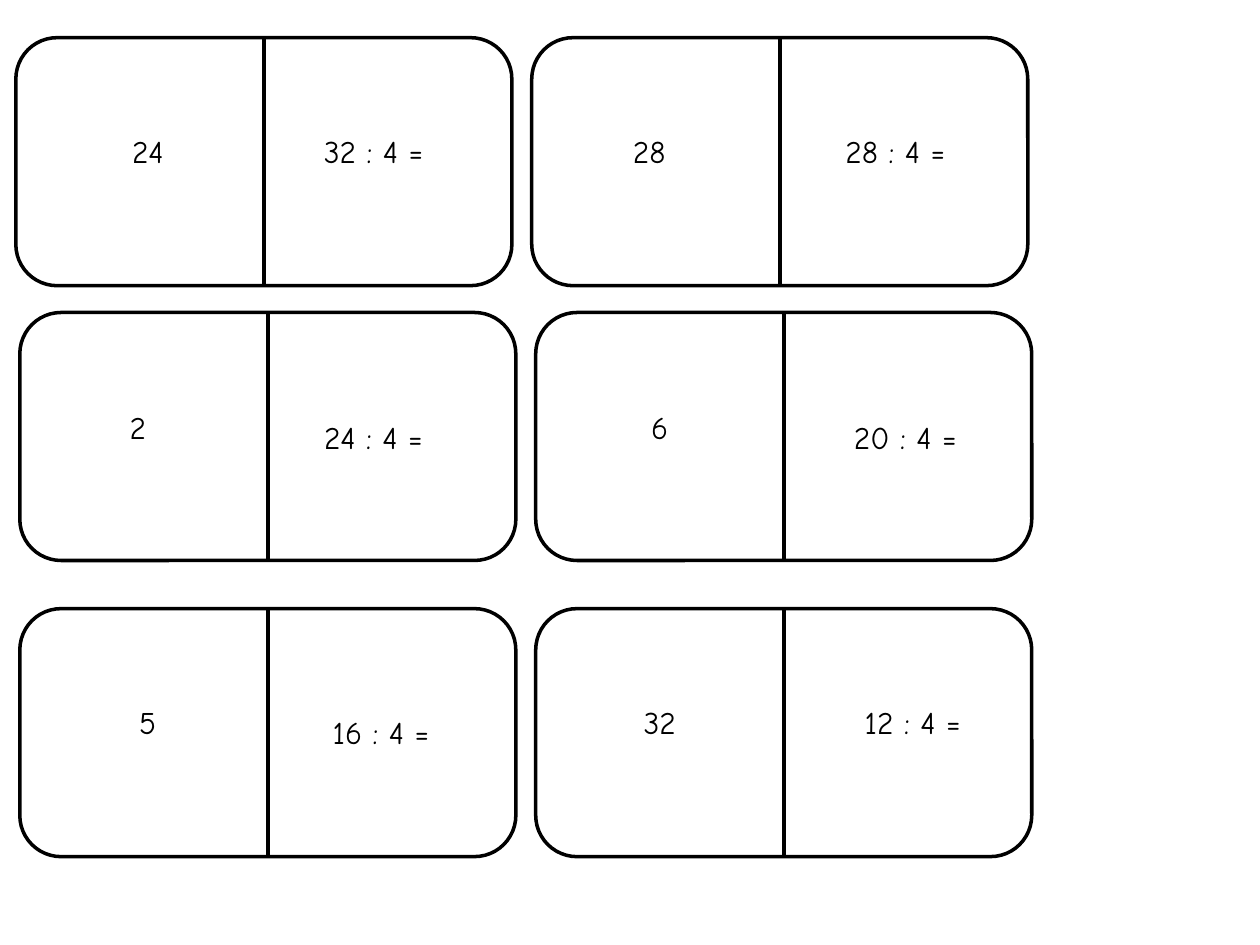
from lxml.etree import SubElement
from pptx import Presentation
from pptx.dml.color import RGBColor
from pptx.enum.shapes import MSO_CONNECTOR, MSO_SHAPE
from pptx.enum.text import MSO_AUTO_SIZE, PP_ALIGN
from pptx.oxml.ns import qn
from pptx.util import Cm, Pt

THEME = {
    "ink": RGBColor(0, 0, 0),
    "font": {"name": "Comic Neue", "size": Pt(18)},
    "line": Pt(2),
}

# Each label: text, centre across the card, top within the card (cm)
ROWS = [
    {"left": 0.32, "top": 0.76, "cards": [
        [("24", 2.66, 1.78), ("32 : 4 =", 7.21, 1.78)],
        [("28", 2.37, 1.78), ("28 : 4 =", 7.33, 1.78)],
    ]},
    {"left": 0.4, "top": 6.3, "cards": [
        [("2", 2.38, 1.8), ("24 : 4 =", 7.13, 2)],
        [("6", 2.5, 1.8), ("20 : 4 =", 7.45, 2)],
    ]},
    {"left": 0.4, "top": 12.27, "cards": [
        [("5", 2.58, 1.78), ("16 : 4 =", 7.28, 1.98)],
        [("32", 2.5, 1.78), ("12 : 4 =", 7.6, 1.78)],
    ]},
]

CARD_WIDTH, CARD_HEIGHT, CARD_STEP = 10, 5, 10.4
ANSWER_WIDTH, QUESTION_WIDTH, LABEL_HEIGHT = 1.6, 2.75, 1.02


def assign(target, values):
    for name, value in values.items():
        setattr(target, name, value)


def draw_outline(line):
    line.color.rgb = THEME["ink"]
    line.width = THEME["line"]


def add_domino(page, left, top):
    group = page.shapes.add_group_shape()
    card = group.shapes.add_shape(
        MSO_SHAPE.ROUNDED_RECTANGLE,
        Cm(left), Cm(top), Cm(CARD_WIDTH), Cm(CARD_HEIGHT))
    card.shadow.inherit = False
    card.fill.background()
    draw_outline(card.line)
    middle = Cm(left + CARD_WIDTH / 2)
    divider = group.shapes.add_connector(
        MSO_CONNECTOR.STRAIGHT, middle, Cm(top), middle, Cm(top + CARD_HEIGHT))
    draw_outline(divider.line)
    SubElement(divider.line._get_or_add_ln().getparent(), qn("a:effectLst"))


def add_label(page, text, centre, top, width, wrap):
    box = page.shapes.add_textbox(
        Cm(centre - width / 2), Cm(top), Cm(width), Cm(LABEL_HEIGHT))
    assign(box.text_frame,
           {"word_wrap": wrap, "auto_size": MSO_AUTO_SIZE.SHAPE_TO_FIT_TEXT})
    para = box.text_frame.paragraphs[0]
    para.alignment = PP_ALIGN.CENTER
    span = para.add_run()
    span.text = text
    assign(span.font, THEME["font"])
    span.font.color.rgb = THEME["ink"]


def main():
    deck = Presentation()
    assign(deck, {"slide_width": Cm(25.4), "slide_height": Cm(19.05)})
    page = deck.slides.add_slide(deck.slide_layouts[6])
    for row in ROWS:
        for column, (answer, question) in enumerate(row["cards"]):
            left, top = row["left"] + column * CARD_STEP, row["top"]
            add_domino(page, left, top)
            for (text, centre, drop), width, wrap in (
                    (answer, ANSWER_WIDTH, True),
                    (question, QUESTION_WIDTH, False)):
                add_label(page, text, left + centre, top + drop, width, wrap)
    deck.save("out.pptx")


if __name__ == "__main__":
    main()
